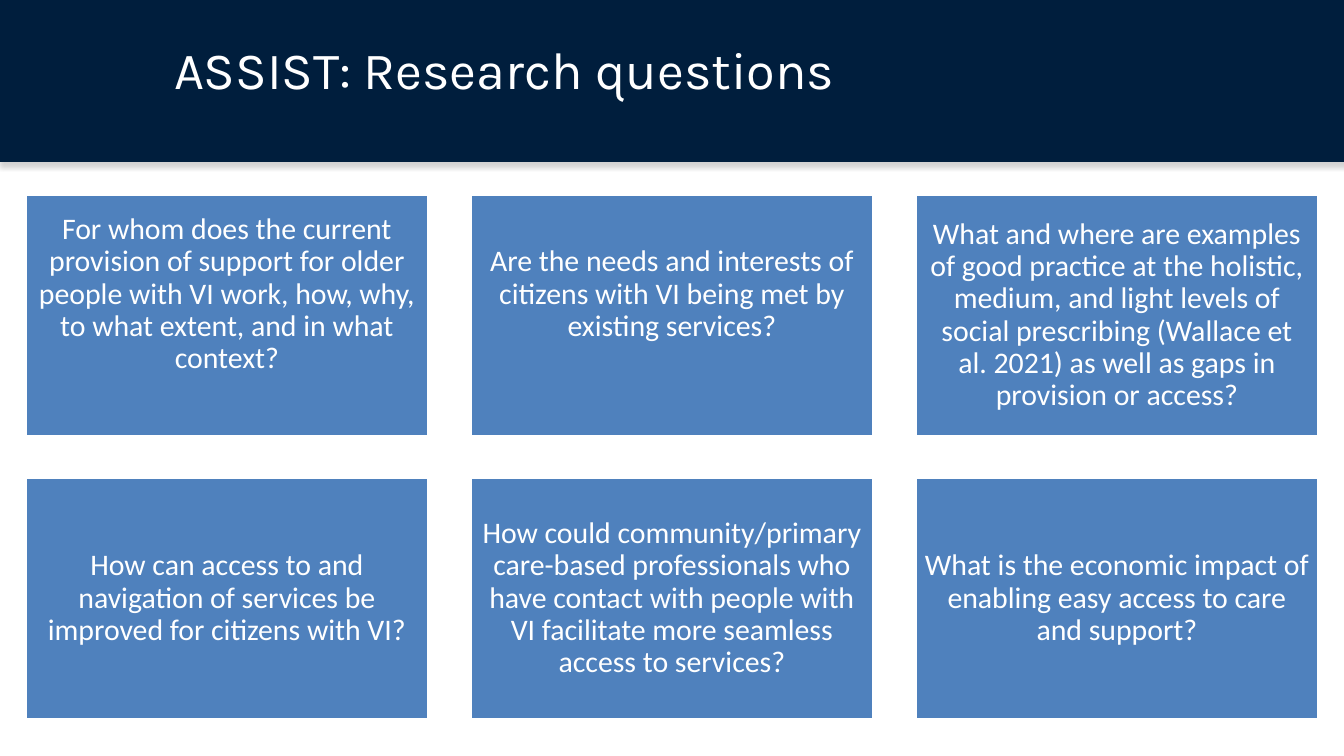
import pptx
import pptx.util
import pptx.dml.color
import pptx.enum.shapes
import pptx.enum.text
import pptx.oxml
import pptx.oxml.ns

SCALE = 914400 / 134.4
ALIGN = pptx.enum.text.PP_ALIGN
ANCHOR = pptx.enum.text.MSO_ANCHOR

NAVY, BLUE, WHITE = "001E3D", "4F81BD", "FFFFFF"
COLS = 3
PAD = 9
LIFT = 42  # extra bottom inset that raises the text of a card

CARDS = [
    ("For whom does the current provision of support for older people with VI "
     "work, how, why, to what extent, and in what context?", LIFT),
    ("Are the needs and interests of citizens with VI being met by existing "
     "services?", LIFT),
    ("What and where are examples of good practice at the holistic, medium, and "
     "light levels of social prescribing (Wallace et al. 2021) as well as gaps "
     "in provision or access?", 0),
    ("How can access to and navigation of services be improved for citizens "
     "with VI?", 0),
    ("How could community/primary care-based professionals who have contact "
     "with people with VI facilitate more seamless access to services?", 0),
    ("What is the economic impact of enabling easy access to care and "
     "support?", 0),
]


def px(n):
    return round(n * SCALE)


def color(code):
    return pptx.dml.color.RGBColor.from_string(code)


def write(shape, text, font="Calibri", size=16, fill=WHITE, align=ALIGN.CENTER,
          anchor=ANCHOR.MIDDLE, space=0.9, inset=(PAD, PAD, PAD, PAD)):
    """Put text in a shape; inset is left, top, right, bottom in px."""
    frame = shape.text_frame
    frame.word_wrap = True
    frame.vertical_anchor = anchor
    (frame.margin_left, frame.margin_top,
     frame.margin_right, frame.margin_bottom) = map(px, inset)
    frame.text = text
    para = frame.paragraphs[0]
    para.alignment = align
    para.line_spacing = space
    run = para.runs[0]
    run.font.name = font
    run.font.size = pptx.util.Pt(size)
    run.font.color.rgb = color(fill)


def add_box(slide, left, top, width, height, fill, line=None):
    box = slide.shapes.add_shape(
        pptx.enum.shapes.MSO_SHAPE.RECTANGLE,
        px(left), px(top), px(width), px(height))
    box.shadow.inherit = False
    box.fill.solid()
    box.fill.fore_color.rgb = color(fill)
    if line:
        box.line.color.rgb = color(line)
        box.line.width = pptx.util.Pt(2)
    else:
        box.line.fill.background()
    return box


def add_shade(shape):
    """Give a shape a soft grey shadow straight below it."""
    shade = pptx.oxml.parse_xml(
        f'<a:outerShdw {pptx.oxml.ns.nsdecls("a")} blurRad="39370" '
        'dist="22860" dir="5400000" rotWithShape="0">'
        '<a:srgbClr val="808080"><a:alpha val="35000"/></a:srgbClr>'
        '</a:outerShdw>')
    effects = shape._element.spPr.find(pptx.oxml.ns.qn("a:effectLst"))
    effects.append(shade)


def add_head(slide, text):
    band = add_box(slide, -1, -1, 1348, 163, NAVY)
    add_shade(band)
    title = slide.shapes.title
    title._element.addprevious(band._element)
    title.left, title.top = px(161), px(30)
    title.width, title.height = px(1204), px(76)
    write(title, text, font="Karla", size=28, align=ALIGN.LEFT,
          anchor=ANCHOR.TOP, space=1.0, inset=(13, 7, 13, 7))


def add_cards(slide):
    for i, (text, lift) in enumerate(CARDS):
        row, col = divmod(i, COLS)
        card = add_box(slide, 25 + 445 * col, 194 + 283 * row, 404, 243,
                       BLUE, WHITE)
        write(card, text, inset=(PAD, PAD, PAD, PAD + lift))


def main():
    deck = pptx.Presentation()
    deck.slide_width, deck.slide_height = px(1344), px(756)
    slide = deck.slides.add_slide(deck.slide_layouts[5])
    add_head(slide, "ASSIST: Research questions")
    add_cards(slide)
    deck.save("out.pptx")


if __name__ == "__main__":
    main()
